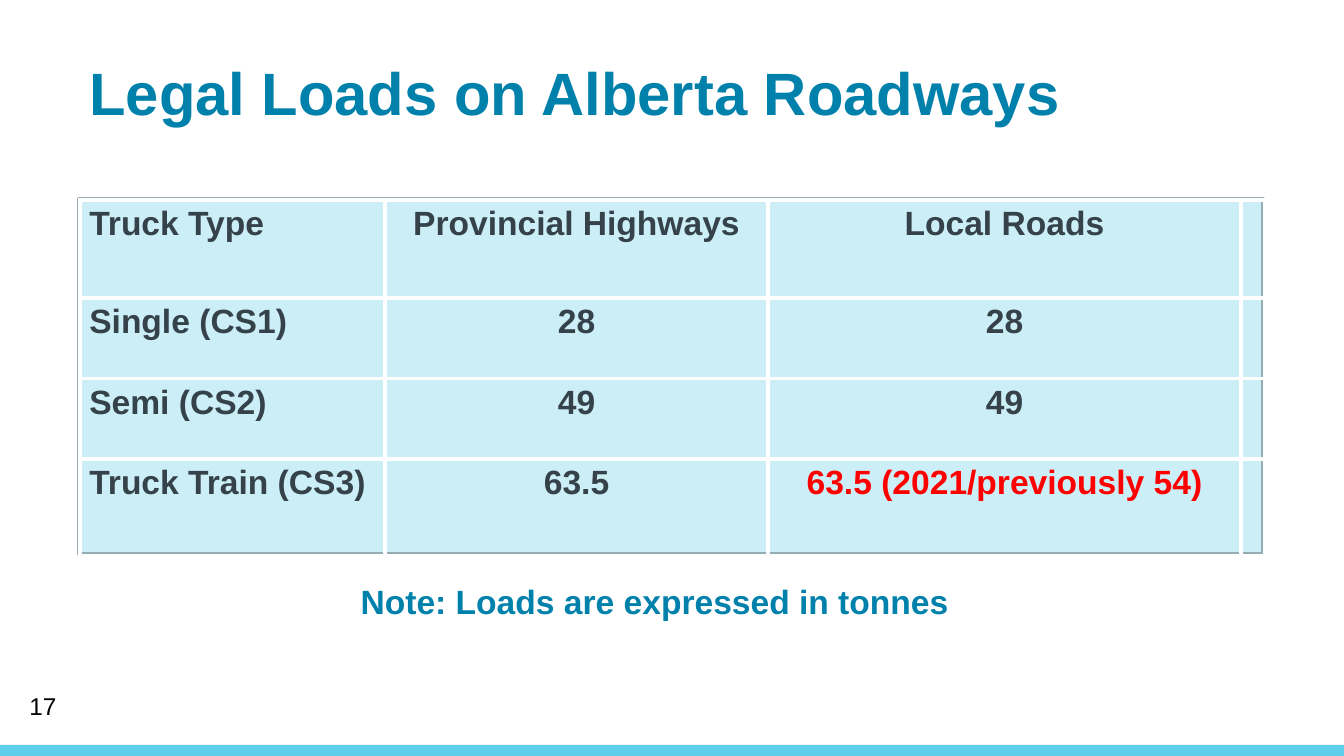
from dataclasses import dataclass

from lxml import etree
from pptx import Presentation
from pptx.dml.color import RGBColor
from pptx.enum.shapes import MSO_SHAPE
from pptx.enum.text import MSO_ANCHOR, PP_ALIGN
from pptx.oxml.ns import qn
from pptx.util import Inches, Pt

RECT = MSO_SHAPE.RECTANGLE
TOP, MID = MSO_ANCHOR.TOP, MSO_ANCHOR.MIDDLE
LEFT, CENTER = PP_ALIGN.LEFT, PP_ALIGN.CENTER
WIDE = Inches(10)
HIGH = WIDE * 9 // 16


@dataclass(frozen=True)
class Theme:
    font: str = "Arial"
    blue: str = "0081AB"
    ink: str = "36424A"
    red: str = "FF0000"
    black: str = "000000"
    white: str = "FFFFFF"
    pale: str = "CCEEF6"
    edge: str = "94ADB3"
    strip: str = "5FCEEA"
    title: int = 32
    body: int = 18
    small: int = 13


THEME = Theme()
COLS = (2.27, 2.85, 3.52, 0.18)
ROWS = (0.73, 0.6, 0.6, 0.72)
LOADS = (
    ("Truck Type", "Provincial Highways", "Local Roads", ""),
    ("Single (CS1)", "28", "28", ""),
    ("Semi (CS2)", "49", "49", ""),
    ("Truck Train (CS3)", "63.5", "63.5 (2021/previously 54)", ""),
)


def area(left, top, width, height):
    return (int(WIDE * left / 100), int(HIGH * top / 100),
            int(WIDE * width / 100), int(HIGH * height / 100))


def write(frame, text, size=THEME.body, color=THEME.ink, bold=True, align=LEFT):
    para = frame.paragraphs[0]
    para.alignment = align
    run = para.add_run()
    run.text = text
    font = run.font
    font.name, font.size, font.bold = THEME.font, Pt(size), bold
    font.color.rgb = RGBColor.from_string(color)


def pad(item, side, edge):
    item.margin_left = item.margin_right = Inches(side)
    item.margin_top = item.margin_bottom = Inches(edge)


def label(slide, place, text, insets=(0.1, 0.05), anchor=TOP, **style):
    frame = slide.shapes.add_textbox(*area(*place)).text_frame
    frame.word_wrap = True
    frame.vertical_anchor = anchor
    pad(frame, *insets)
    write(frame, text, **style)


def panel(slide, place, fill, edge=None):
    shape = slide.shapes.add_shape(RECT, *area(*place))
    shape.shadow.inherit = False
    shape.fill.solid()
    shape.fill.fore_color.rgb = RGBColor.from_string(fill)
    if edge:
        shape.line.color.rgb = RGBColor.from_string(edge)
        shape.line.width = Pt(2)
    else:
        shape.line.fill.background()


def border(cell, color, width):
    props = cell._tc.get_or_add_tcPr()
    for side in ("lnL", "lnR", "lnT", "lnB"):
        line = etree.SubElement(props, qn(f"a:{side}"), w=str(Pt(width)))
        fill = etree.SubElement(line, qn("a:solidFill"))
        etree.SubElement(fill, qn("a:srgbClr"), val=color)


def grid(slide, place, rows):
    left, top, width, height = area(*place)
    table = slide.shapes.add_table(
        len(rows), len(COLS), left, top, width, height).table
    table.first_row = table.horz_banding = False
    for col, share in zip(table.columns, COLS):
        col.width = int(width * share / sum(COLS))
    for row, share in zip(table.rows, ROWS):
        row.height = int(height * share / sum(ROWS))
    for r, texts in enumerate(rows):
        for c, text in enumerate(texts):
            cell = table.cell(r, c)
            pad(cell, 0.07, 0.04)
            border(cell, THEME.white, 2.25)
            cell.fill.background()
            if text:
                color = THEME.red if "previously" in text else THEME.ink
                write(cell.text_frame, text, color=color,
                      align=CENTER if c else LEFT)


def main():
    deck = Presentation()
    deck.slide_width, deck.slide_height = WIDE, HIGH
    slide = deck.slides.add_slide(deck.slide_layouts[6])
    panel(slide, (0, 98.55, 100, 1.45), THEME.strip)
    panel(slide, (5.9, 26.3, 88.1, 47), THEME.pale, THEME.edge)
    label(slide, (5.95, 6.6, 89.9, 10.1), "Legal Loads on Alberta Roadways",
          insets=(0.07, 0.04), size=THEME.title, color=THEME.blue)
    grid(slide, (5.95, 26.45, 88.2, 47.1), LOADS)
    label(slide, (25.85, 76, 46.2, 7.1), "Note: Loads are expressed in tonnes",
          color=THEME.blue)
    label(slide, (1.2, 90.7, 22.5, 5.3), "17", anchor=MID,
          size=THEME.small, color=THEME.black, bold=False)
    deck.save("out.pptx")


if __name__ == "__main__":
    main()
